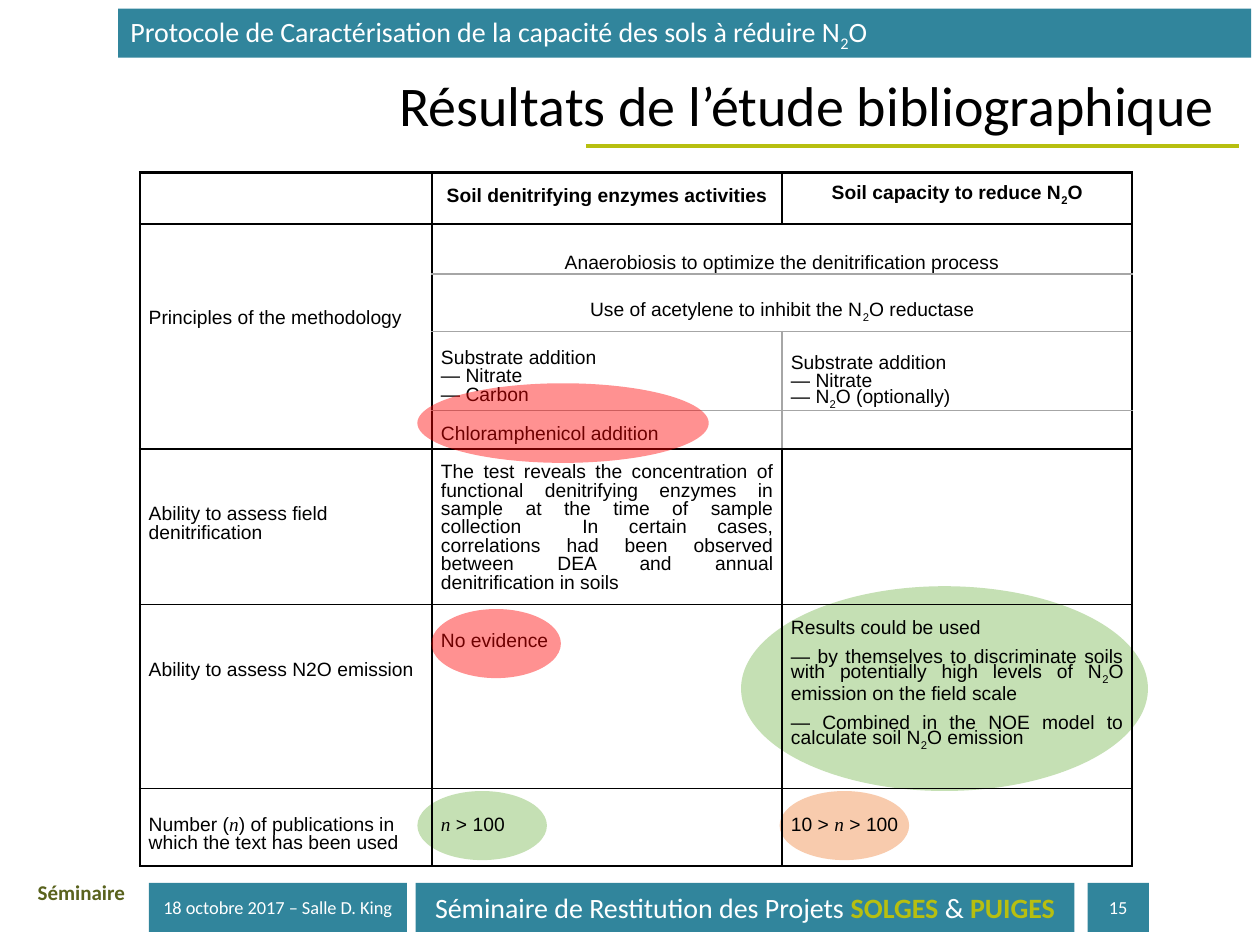
"""Build the slide on the bibliographic study of soil N2O reduction."""
from dataclasses import dataclass

from lxml import etree
from pptx import Presentation
from pptx.dml.color import RGBColor
from pptx.enum.shapes import MSO_CONNECTOR, MSO_SHAPE
from pptx.enum.text import MSO_ANCHOR, PP_ALIGN
from pptx.oxml.ns import qn
from pptx.util import Pt

LEFT, CENTER, JUSTIFY = PP_ALIGN.LEFT, PP_ALIGN.CENTER, PP_ALIGN.JUSTIFY
TOP, MIDDLE = MSO_ANCHOR.TOP, MSO_ANCHOR.MIDDLE
RECT, OVAL, ROUNDED = MSO_SHAPE.RECTANGLE, MSO_SHAPE.OVAL, MSO_SHAPE.ROUNDED_RECTANGLE


@dataclass(frozen=True)
class Theme:
    teal: str = "31859C"
    lime: str = "B7BF10"
    olive: str = "59621D"
    white: str = "FFFFFF"
    black: str = "000000"
    grey: str = "A6A6A6"
    orange: str = "F8CBAD"
    green: str = "C5E0B4"
    red: str = "FF0000"
    heading: str = "Calibri"
    body: str = "Arial"
    symbol: str = "Times New Roman"
    title_size: float = 32
    band_size: float = 16
    label_size: float = 12
    cell_size: float = 11
    small_size: float = 10.5


theme = Theme()


def write(paragraph, text, font, size, color, align, bold=False):
    """Write text whose parts between bars are subscripts, symbols or project names."""
    paragraph.alignment = align
    paragraph.font.name, paragraph.font.size, paragraph.font.bold = font, Pt(size), bold
    paragraph.font.color.rgb = RGBColor.from_string(color)
    for index, part in enumerate(text.split("|")):
        if not part:
            continue
        run = paragraph.add_run()
        run.text = part
        if index % 2 == 0:
            continue
        if part == "2":
            run.font._element.set("baseline", "-25000")
        elif part == "n":
            run.font.name, run.font.italic = theme.symbol, True
        else:
            run.font.bold = True
            run.font.color.rgb = RGBColor.from_string(theme.lime)


def add_block(kind, left, top, width, height, color):
    """Add a flat filled shape without outline."""
    block = slide.shapes.add_shape(kind, Pt(left), Pt(top), Pt(width), Pt(height))
    block.shadow.inherit = False
    block.fill.solid()
    block.fill.fore_color.rgb = RGBColor.from_string(color)
    block.line.fill.background()
    return block


prs = Presentation()
prs.slide_width, prs.slide_height = Pt(720), Pt(540)
slide = prs.slides.add_slide(prs.slide_layouts[5])

seminar = add_block(ROUNDED, 0, 497, 93, 36, theme.white)
seminar.adjustments[0] = 0.21
seminar.text_frame.vertical_anchor = TOP
write(seminar.text_frame.paragraphs[0], "Séminaire", theme.heading, theme.label_size,
      theme.olive, CENTER, True)

bands = [
    (85, 504.5, 147.5, theme.small_size, CENTER, "18 octobre 2017 – Salle D. King"),
    (237.5, 504.5, 376.5, theme.band_size, CENTER,
     "Séminaire de Restitution des Projets |SOLGES |& |PUIGES|"),
    (621.5, 504.5, 35, theme.small_size, CENTER, "15"),
    (67.5, 5, 647.5, theme.band_size, LEFT,
     "Protocole de Caractérisation de la capacité des sols à réduire N|2|O"),
]
for left, top, width, size, align, text in bands:
    band = add_block(RECT, left, top, width, 28, theme.teal)
    band.text_frame.vertical_anchor = MIDDLE
    write(band.text_frame.paragraphs[0], text, theme.heading, size, theme.white, align)

title = slide.shapes.title
title.left, title.top, title.width, title.height = Pt(221), Pt(36.5), Pt(490), Pt(46)
title.text_frame.vertical_anchor = TOP
write(title.text_frame.paragraphs[0], "Résultats de l’étude bibliographique",
      theme.heading, theme.title_size, theme.black, LEFT)

underline = slide.shapes.add_connector(MSO_CONNECTOR.STRAIGHT, Pt(335), Pt(83.5), Pt(708), Pt(83.5))
underline.line.color.rgb = RGBColor.from_string(theme.lime)
underline.line.width = Pt(2.5)
etree.SubElement(underline._element.spPr, qn("a:effectLst"))

for left, top, width, height, color in [
    (445.5, 452, 74, 39.5, theme.orange),
    (238.5, 452, 74, 39.5, theme.green),
    (423.5, 335, 232.5, 117, theme.green),
]:
    add_block(OVAL, left, top, width, height, color)

col_widths = [167, 200, 200]
row_heights = [29.5, 28.5, 33, 45, 19.5, 89, 105, 44.5]
frame = slide.shapes.add_table(len(row_heights), len(col_widths), Pt(80), Pt(98.5),
                               Pt(sum(col_widths)), Pt(sum(row_heights)))
methods = frame.table
methods.first_row = methods.horz_banding = False
for column, width in zip(methods.columns, col_widths):
    column.width = Pt(width)
for row, height in zip(methods.rows, row_heights):
    row.height = Pt(height)

last_row, last_col = len(row_heights), len(col_widths)
for r in range(last_row):
    for c in range(last_col):
        cell = methods.cell(r, c)
        cell.margin_left = cell.margin_right = Pt(5)
        cell.margin_top = cell.margin_bottom = 0
        properties = cell._tc.get_or_add_tcPr()
        for tag, edge, outer, inner_grey in [
            ("a:lnL", c, (0, last_col), c == 2 and r in (3, 4)),
            ("a:lnR", c + 1, (0, last_col), c == 1 and r in (3, 4)),
            ("a:lnT", r, (0, 1, last_row), c > 0 and r in (2, 3, 4)),
            ("a:lnB", r + 1, (0, 1, last_row), c > 0 and r in (1, 2, 3)),
        ]:
            border = etree.SubElement(properties, qn(tag), w=str(Pt(1.5 if edge in outer else 1)))
            paint = etree.SubElement(border, qn("a:solidFill"))
            etree.SubElement(paint, qn("a:srgbClr"), val=theme.grey if inner_grey else theme.black)
        cell.fill.background()

methods.cell(1, 0).merge(methods.cell(4, 0))
for r in (1, 2):
    methods.cell(r, 1).merge(methods.cell(r, 2))

contents = [
    (0, 1, 9, CENTER, 0, ["Soil denitrifying enzymes activities"]),
    (0, 2, 9, CENTER, 0, ["Soil capacity to reduce N|2|O"]),
    (1, 0, 49.5, LEFT, 0, ["Principles of the methodology"]),
    (1, 1, 18, CENTER, 0, ["Anaerobiosis to optimize the denitrification process"]),
    (2, 1, 18, CENTER, 0, ["Use of acetylene to inhibit the N|2|O reductase"]),
    (3, 1, 10.5, JUSTIFY, 0, ["Substrate addition", "— Nitrate", "— Carbon"]),
    (3, 2, 13.5, JUSTIFY, 0, ["Substrate addition", "— Nitrate", "— N|2|O (optionally)"]),
    (4, 1, 9, JUSTIFY, 0, ["Chloramphenicol addition"]),
    (5, 0, 33, LEFT, 0, ["Ability to assess field denitrification"]),
    (5, 1, 9, JUSTIFY, 0, [
        "The test reveals the concentration of functional denitrifying enzymes in sample at the "
        "time of sample collection  In certain cases, correlations had been observed between DEA "
        "and annual denitrification in soils"]),
    (6, 0, 33, LEFT, 0, ["Ability to assess N2O emission"]),
    (6, 1, 16.5, JUSTIFY, 0, ["No evidence"]),
    (6, 2, 9, JUSTIFY, 6, [
        "Results could be used",
        "— by themselves to discriminate soils with potentially high levels of N|2|O emission "
        "on the field scale",
        "— Combined in the NOE model to calculate soil N|2|O emission"]),
    (7, 0, 16.5, LEFT, 0, ["Number (|n|) of publications in which the text has been used"]),
    (7, 1, 16.5, JUSTIFY, 0, ["|n| > 100"]),
    (7, 2, 16.5, JUSTIFY, 0, ["10 > |n| > 100"]),
]
for r, c, offset, align, gap, lines in contents:
    cell = methods.cell(r, c)
    cell.margin_top = Pt(offset)
    for index, text in enumerate(lines):
        paragraph = cell.text_frame.paragraphs[0] if index == 0 else cell.text_frame.add_paragraph()
        paragraph.line_spacing = Pt(10.5)
        if index:
            paragraph.space_before = Pt(gap)
        write(paragraph, text, theme.body, theme.cell_size, theme.black, align, r == 0)

for left, top, width, height in [(246.5, 348, 74, 39.5), (238.5, 219, 166.5, 45.5)]:
    highlight = add_block(OVAL, left, top, width, height, theme.red)
    tint = highlight._element.spPr.find(qn("a:solidFill"))[0]
    etree.SubElement(tint, qn("a:alpha"), val="43000")

prs.save("out.pptx")
